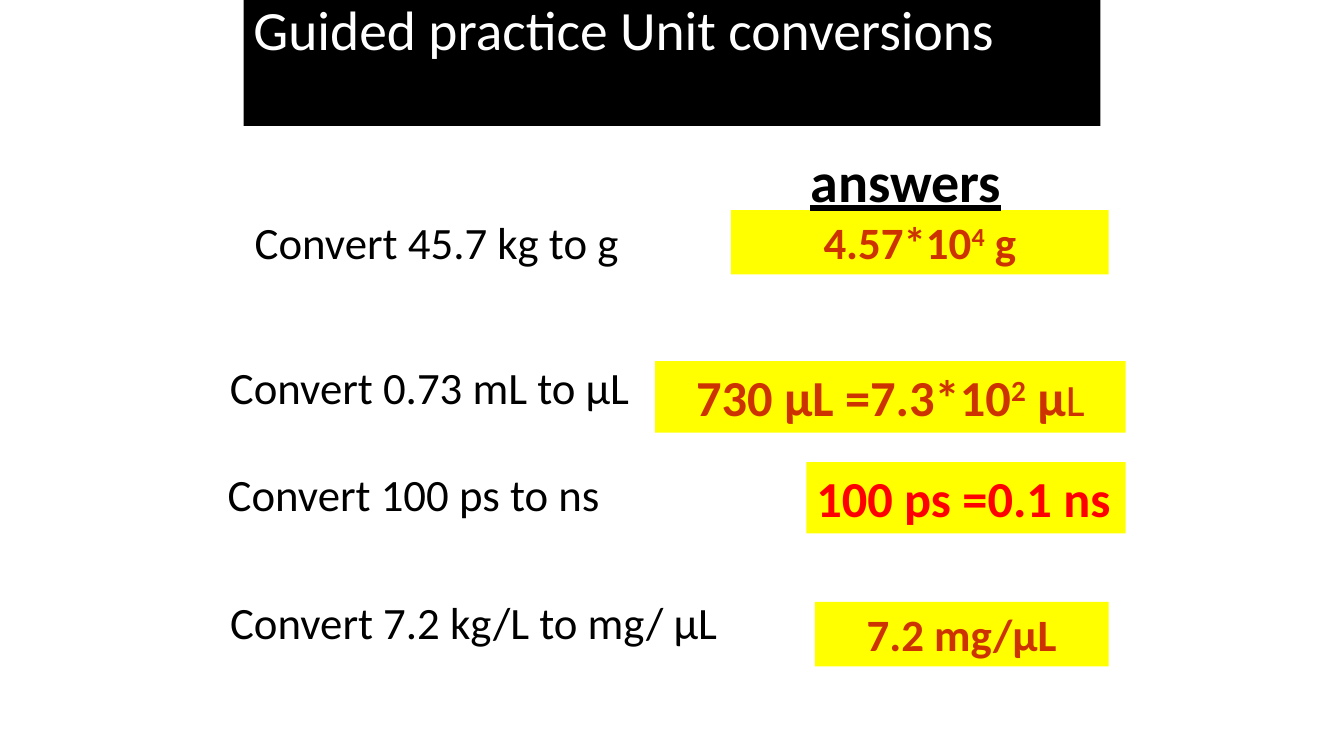
"""Build a slide of guided unit conversions with highlighted answers."""
from pptx import Presentation
from pptx.dml.color import RGBColor
from pptx.enum.text import MSO_ANCHOR, PP_ALIGN
from pptx.util import Pt

BLACK = RGBColor(0x00, 0x00, 0x00)
WHITE = RGBColor(0xFF, 0xFF, 0xFF)
YELLOW = RGBColor(0xFF, 0xFF, 0x00)
RUST = RGBColor(0xCC, 0x33, 0x00)
RED = RGBColor(0xFF, 0x00, 0x00)
LEFT, CENTER = PP_ALIGN.LEFT, PP_ALIGN.CENTER

deck = Presentation()
deck.slide_width, deck.slide_height = Pt(960), Pt(540)
page = deck.slides.add_slide(deck.slide_layouts[6])


def add_text(left, top, width, height, spans, align=CENTER, fill=None):
    box = page.shapes.add_textbox(Pt(left), Pt(top), Pt(width), Pt(height))
    if fill is not None:
        box.fill.solid()
        box.fill.fore_color.rgb = fill
    box.text_frame.word_wrap = True
    para = box.text_frame.paragraphs[0]
    para.alignment = align
    for text, size, color, formats in spans:
        span = para.add_run()
        span.text = text
        span.font.name = "Calibri"
        span.font.size = Pt(size)
        span.font.color.rgb = color
        for name, value in formats.items():
            setattr(span.font, name, value)
    return box


title = add_text(174, 0, 612, 90, [("Guided practice Unit conversions", 39.6, WHITE, {})], LEFT, BLACK)
title.text_frame.vertical_anchor = MSO_ANCHOR.TOP
title.text_frame.margin_top = Pt(1.5)
title.text_frame.paragraphs[0].line_spacing = 0.9

questions = [
    (168, 150, 288, "Convert 45.7 kg to g", CENTER),
    (138, 253.5, 338, "Convert 0.73 mL to μL", CENTER),
    (155.5, 330, 330.5, "Convert 100 ps to ns", LEFT),
    (155.5, 421, 366, "Convert 7.2 kg/L to mg/ μL", CENTER),
]
for left, top, width, text, align in questions:
    add_text(left, top, width, 46, [(text, 32, BLACK, {})], align)

bold = {"bold": True}
answers = [
    (522, 150, 270, 46, CENTER,
     [("4.57*10", 32, RUST, bold), ("4", 32, RUST, bold), (" g", 32, RUST, bold)]),
    (468, 258, 336, 51, CENTER,
     [("730 μL =7.3*10", 36, RUST, bold), ("2", 36, RUST, bold),
      (" μ", 36, RUST, bold), ("L", 32, RUST, {"bold": False})]),
    (576, 330, 228, 51, LEFT, [("100 ps =0.1 ns", 36, RED, bold)]),
    (582, 430, 210, 46, CENTER, [("7.2 mg/μL", 32, RUST, bold)]),
]
for left, top, width, height, align, spans in answers:
    answer = add_text(left, top, width, height, spans, align, YELLOW)
    for exponent in answer.text_frame.paragraphs[0].runs[1:2]:
        exponent._r.get_or_add_rPr().set("baseline", "30000")

add_text(524, 101, 246, 55.5, [("answers", 40, BLACK, {"bold": True, "underline": True})])

deck.save("out.pptx")
